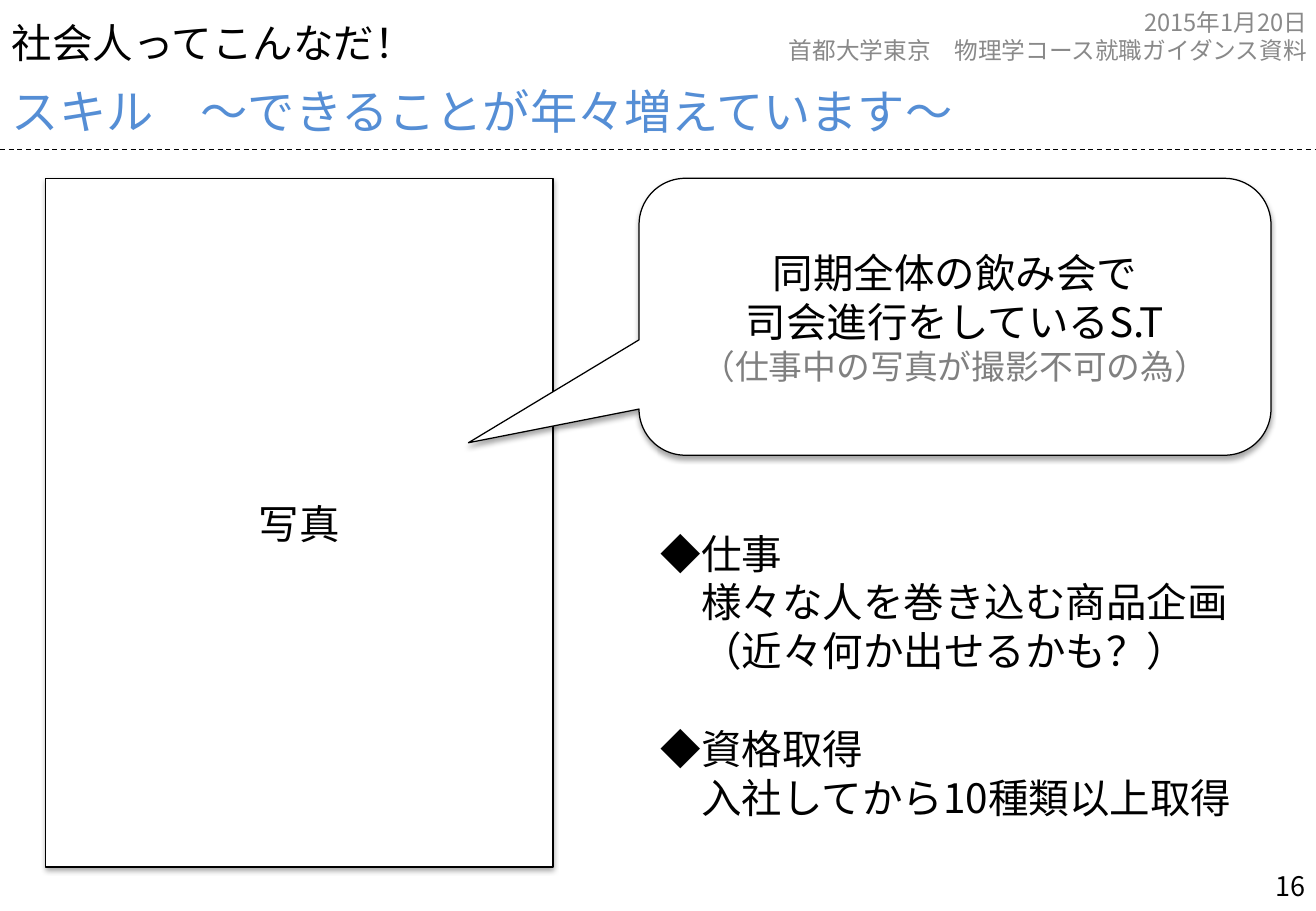
from dataclasses import dataclass
from typing import Any

from lxml import etree
from pptx import Presentation
from pptx.dml.color import RGBColor
from pptx.enum import dml, shapes, text
from pptx.oxml import ns
from pptx.util import Cm, Pt

FONT = "Noto Sans CJK JP"
COLORS = {"black": "000000", "white": "FFFFFF", "blue": "558ED5",
          "note": "808080", "date": "898989"}
LEFT, MID, RIGHT = text.PP_ALIGN.LEFT, text.PP_ALIGN.CENTER, text.PP_ALIGN.RIGHT
TOP, BASE = text.MSO_ANCHOR.TOP, text.MSO_ANCHOR.BOTTOM
PITCH = 1.21  # line height per point of type
SHEET = (27.51, 19.05)
RULE = 3.12  # height of the dashed line
INDENT = 0.85


@dataclass
class Line:
    words: str
    size: int = 24
    color: str = "black"
    indent: float = 0
    gap: float = 0


@dataclass
class Label:
    box: tuple[float, float, float, float]
    lines: list[Line]
    align: Any = LEFT
    anchor: Any = TOP


@dataclass
class Panel:
    kind: Any
    box: tuple[float, float, float, float]
    lines: list[Line]
    adjust: tuple[float, ...] = ()


HEADER = Label((15.06, 0.03, 12.52, 1.5),
               [Line("2015年1月20日", 14, "date"),
                Line("首都大学東京　物理学コース就職ガイダンス資料", 14, "date")], RIGHT)
TOPIC = Label((0, 0, 25.68, 1.52), [Line("社会人ってこんなだ！")], anchor=BASE)
NUMBER = Label((21.11, 18.06, 6.43, 1.02), [Line("16", 16)], RIGHT)
TITLE = Label((0, 1.52, SHEET[0], 1.52),
              [Line("スキル　〜できることが年々増えています〜", 28, "blue")], anchor=BASE)
SKILLS = Label((13.56, 10.92, 13, 6.4),
               [Line("◆仕事"),
                Line("様々な人を巻き込む商品企画", indent=INDENT),
                Line("（近々何か出せるかも？）", indent=INDENT),
                Line("◆資格取得", gap=24 * PITCH),
                Line("入社してから10種類以上取得", indent=INDENT)])
PHOTO = Panel(shapes.MSO_SHAPE.RECTANGLE, (0.96, 3.73, 10.6, 14.4), [Line("写真")])
BALLOON = Panel(shapes.MSO_SHAPE.ROUNDED_RECTANGULAR_CALLOUT,
                (13.36, 3.73, 13.21, 5.79),
                [Line("同期全体の飲み会で"), Line("司会進行をしているS.T"),
                 Line("（仕事中の写真が撮影不可の為）", 20, "note")],
                (-0.77, 0.455, 0.167))


def paint(name: str) -> RGBColor:
    return RGBColor.from_string(COLORS[name])


def apply(item: Any, values: dict[str, Any]) -> None:
    for key, value in values.items():
        setattr(item, key, value)


def node(parent: Any, tag: str, **values: Any) -> Any:
    child = etree.SubElement(parent, ns.qn(tag))
    for key, value in values.items():
        child.set(key, str(value))
    return child


def write(frame: Any, lines: list[Line], align: Any, anchor: Any) -> None:
    apply(frame, {"word_wrap": True, "vertical_anchor": anchor})
    for i, line in enumerate(lines):
        para = frame.add_paragraph() if i else frame.paragraphs[0]
        apply(para, {"alignment": align, "line_spacing": Pt(line.size * PITCH),
                     "space_before": Pt(line.gap)})
        if line.indent:
            para._p.get_or_add_pPr().set("marL", str(Cm(line.indent)))
        run = para.add_run()
        run.text = line.words
        apply(run.font, {"size": Pt(line.size), "name": FONT})
        run.font.color.rgb = paint(line.color)
        node(run.font._element, "a:ea", typeface=FONT)


def add_label(slide: Any, label: Label) -> None:
    box = slide.shapes.add_textbox(*map(Cm, label.box))
    write(box.text_frame, label.lines, label.align, label.anchor)


def shade(shape: Any) -> None:
    shape.shadow.inherit = False
    effect = shape._element.spPr.find(ns.qn("a:effectLst"))
    outer = node(effect, "a:outerShdw", blurRad=Pt(3.1), dist=Pt(1.8),
                 dir=90 * 60000, rotWithShape=0)
    color = node(outer, "a:srgbClr", val=COLORS["black"])
    node(color, "a:alpha", val=35000)


def add_panel(slide: Any, panel: Panel) -> None:
    shape = slide.shapes.add_shape(panel.kind, *map(Cm, panel.box))
    for i, value in enumerate(panel.adjust):
        shape.adjustments[i] = value
    shape.fill.solid()
    shape.fill.fore_color.rgb = paint("white")
    shape.line.color.rgb = paint("black")
    shape.line.width = Pt(0.75)
    shade(shape)
    write(shape.text_frame, panel.lines, MID, text.MSO_ANCHOR.MIDDLE)


def add_rule(slide: Any) -> None:
    rule = slide.shapes.add_connector(shapes.MSO_CONNECTOR.STRAIGHT,
                                      0, Cm(RULE), Cm(SHEET[0]), Cm(RULE))
    rule.line.color.rgb = paint("black")
    apply(rule.line, {"width": Pt(0.75), "dash_style": dml.MSO_LINE.DASH})
    node(rule._element.spPr, "a:effectLst")


def main() -> None:
    deck = Presentation()
    apply(deck, {"slide_width": Cm(SHEET[0]), "slide_height": Cm(SHEET[1])})
    slide = deck.slides.add_slide(deck.slide_layouts[6])

    # Heading band
    for label in (HEADER, TOPIC, TITLE):
        add_label(slide, label)
    add_rule(slide)

    # Photo frame and its speech balloon
    for panel in (PHOTO, BALLOON):
        add_panel(slide, panel)

    # Skill list and page number
    for label in (SKILLS, NUMBER):
        add_label(slide, label)

    deck.save("out.pptx")


if __name__ == "__main__":
    main()
